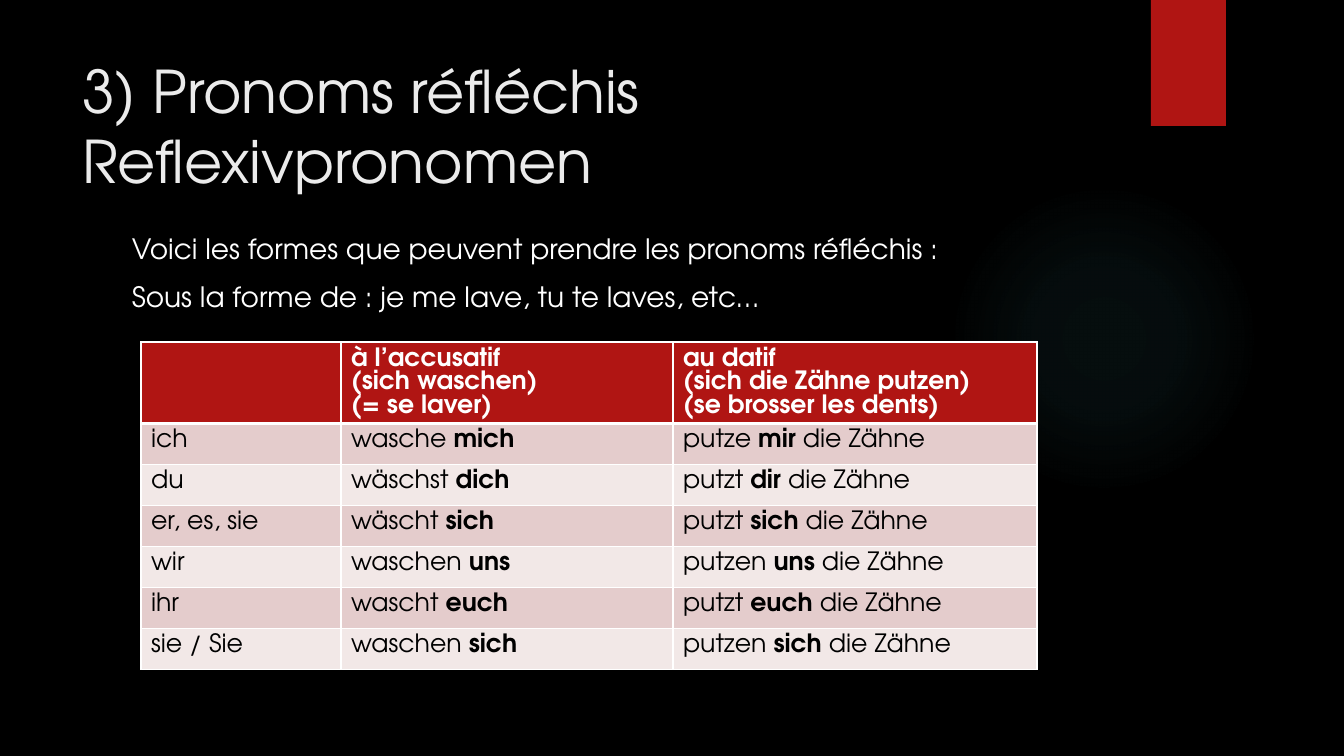
from copy import deepcopy
from dataclasses import dataclass

from pptx import Presentation
from pptx import oxml, util as u
from pptx.dml.color import RGBColor
from pptx.enum import shapes, text
from pptx.oxml import ns

SCALE = 9072


@dataclass(frozen=True)
class Theme:
    """Colours, font and type sizes."""
    font: str = "TeX Gyre Adventor"
    back: str = "000000"
    red: str = "B01513"
    glow: str = "50B9C1"
    pale: str = "EBEBEB"
    white: str = "FFFFFF"
    ink: str = "000000"
    bands: tuple = ("E4CCCC", "F2E8E7")
    head: int = 42
    body: int = 20
    cell: int = 18
    pitch: int = 17


T = Theme()
INTRO = (
    "Voici les formes que peuvent prendre les pronoms réfléchis :",
    "Sous la forme de : je me lave, tu te laves, etc…",
)
HEADS = (
    "",
    "à l’accusatif|(sich waschen)|(= se laver)",
    "au datif|(sich die Zähne putzen)|(se brosser les dents)",
)
FORMS = (
    ("ich", "wasche", "mich", "putze", "mir"),
    ("du", "wäschst", "dich", "putzt", "dir"),
    ("er, es, sie", "wäscht", "sich", "putzt", "sich"),
    ("wir", "waschen", "uns", "putzen", "uns"),
    ("ihr", "wascht", "euch", "putzt", "euch"),
    ("sie / Sie", "waschen", "sich", "putzen", "sich"),
)


def px(*nums):
    """Turn px into EMU."""
    return [u.Emu(n * SCALE) for n in nums]


def write(frame, lines, size, color, bold=False, space=1.0, gap=0):
    """Fill a text frame; asterisks switch bold and newlines break a line."""
    for i, line in enumerate(lines):
        para = frame.paragraphs[0] if i == 0 else frame.add_paragraph()
        para.alignment = text.PP_ALIGN.LEFT
        para.line_spacing = space
        para.space_before = u.Pt(gap if i else 0)
        for j, part in enumerate(line.split("*")):
            for k, words in enumerate(part.split("\n")):
                if k:
                    para.add_line_break()
                if not words:
                    continue
                run = para.add_run()
                run.text = words
                font = run.font
                font.name, font.size = T.font, u.Pt(size)
                font.bold = bold or j % 2 == 1
                font.color.rgb = RGBColor.from_string(color)
        for brk in para._p.findall(ns.qn("a:br")):
            brk.append(deepcopy(para.runs[0].font._element))


def block(slide, kind, box, color):
    """Add a plain filled shape."""
    shape = slide.shapes.add_shape(kind, *px(*box))
    shape.shadow.inherit = False
    shape.line.fill.background()
    shape.fill.solid()
    shape.fill.fore_color.rgb = RGBColor.from_string(color)
    return shape


def glow(slide, box):
    """Add a disc that fades out towards its rim."""
    disc = block(slide, shapes.MSO_SHAPE.OVAL, box, T.glow)
    stops = "".join(
        f'<a:gs pos="{pos}000"><a:srgbClr val="{T.glow}">'
        f'<a:alpha val="{alpha}000"/></a:srgbClr></a:gs>'
        for pos, alpha in ((0, 7), (36, 6), (69, 0), (100, 0)))
    grad = oxml.parse_xml(
        f'<a:gradFill {ns.nsdecls("a")} rotWithShape="1"><a:gsLst>{stops}</a:gsLst>'
        '<a:path path="circle"><a:fillToRect l="50000" t="50000" r="50000" '
        'b="50000"/></a:path></a:gradFill>')
    props = disc._element.spPr
    props.replace(props.find(ns.qn("a:solidFill")), grad)


def title(slide, words, box):
    """Place and format the title."""
    head = slide.shapes.title
    head.left, head.top, head.width, head.height = px(*box)
    frame = head.text_frame
    frame.word_wrap = True
    frame.auto_size = text.MSO_AUTO_SIZE.NONE
    frame.vertical_anchor = text.MSO_ANCHOR.MIDDLE
    write(frame, [words], T.head, T.pale)


def label(slide, lines, box):
    """Add the lines of introduction."""
    frame = slide.shapes.add_textbox(*px(*box)).text_frame
    frame.word_wrap = True
    write(frame, lines, T.body, T.white, gap=10)


def edge(cell, **widths):
    """Draw white cell borders with widths in points."""
    props = cell._tc.get_or_add_tcPr()
    for side in "LRTB":
        props.append(oxml.parse_xml(
            f'<a:ln{side} {ns.nsdecls("a")} w="{u.Pt(widths.get(side, 1))}">'
            f'<a:solidFill><a:srgbClr val="{T.white}"/></a:solidFill></a:ln{side}>'))


def grid(slide, rows, spot, cols, tall, high):
    """Add the table of pronouns with a red header and banded rows."""
    size = sum(cols), tall + high * (len(rows) - 1)
    table = slide.shapes.add_table(len(rows), len(cols), *px(*spot, *size)).table
    for col, wide in zip(table.columns, px(*cols)):
        col.width = wide
    for i, row in enumerate(rows):
        table.rows[i].height = px(high if i else tall)[0]
        fill = T.bands[(i - 1) % 2] if i else T.red
        for j, words in enumerate(row):
            cell = table.cell(i, j)
            edge(cell, B=1 if i else 3, T=3 if i == 1 else 1)
            cell.fill.solid()
            cell.fill.fore_color.rgb = RGBColor.from_string(fill)
            write(cell.text_frame, words.split("|"), T.cell,
                  T.ink if i else T.white, bold=i == 0, space=u.Pt(T.pitch))


def main():
    """Build the slide and save it."""
    deck = Presentation()
    deck.slide_width, deck.slide_height = px(1344, 756)
    slide = deck.slides.add_slide(deck.slide_layouts[5])
    back = slide.background.fill
    back.solid()
    back.fore_color.rgb = RGBColor.from_string(T.back)
    glow(slide, (949, 184, 310, 310))
    block(slide, shapes.MSO_SHAPE.RECTANGLE, (1151, 0, 75, 126), T.red)
    title(slide, "3) Pronoms réfléchis\nReflexivpronomen", (72, 48, 1037, 154))
    label(slide, INTRO, (122, 227, 986, 463))
    rows = [HEADS] + [
        (who, f"{wash} *{acc}*", f"{brush} *{dat}* die Zähne")
        for who, wash, acc, brush, dat in FORMS]
    grid(slide, rows, (141, 342), (200, 332, 364), 81, 41)
    deck.save("out.pptx")


if __name__ == "__main__":
    main()
